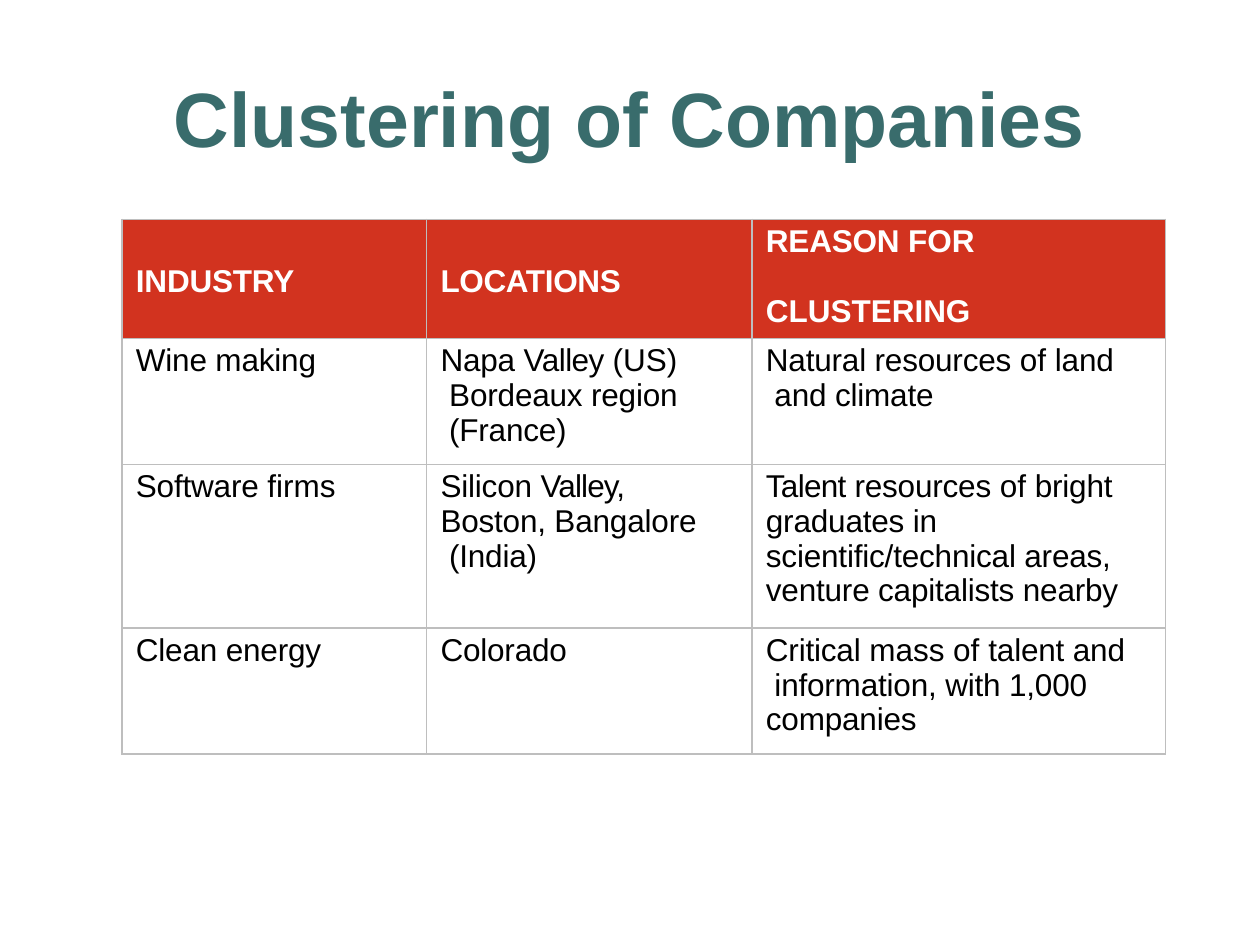
"""Build a slide with a table of industry clusters and the reasons for them."""
import pptx
import pptx.dml.color
import pptx.enum.text
import pptx.oxml
import pptx.oxml.ns
import pptx.util
from pptx.dml.color import RGBColor
from pptx.util import Cm, Pt

TEAL = RGBColor(0x39, 0x6C, 0x6C)
RED = RGBColor(0xD2, 0x33, 0x1F)
WHITE = RGBColor(0xFF, 0xFF, 0xFF)
BLACK = RGBColor(0, 0, 0)
GREY = RGBColor(0xBE, 0xBE, 0xBE)
FONT = "Arial"

TITLE = "Clustering of Companies"
HEADINGS = [
    [[("INDUSTRY", -0.1)]],
    [[("LOCATIONS", -0.2)]],
    [[("REASON ", -0.1), ("FOR", 0)], [("CLUSTERING", 0)]],
]
CLUSTERS = [
    [
        [[("Wine making", -0.1)]],
        [[("Napa ", -0.1), ("Valley ", -0.3), ("(US)\v ", 0),
          ("Bordeaux region\v (France)", -0.1)]],
        [[("Natural resources ", -0.1), ("of ", 0), ("land\v and climate", -0.1)]],
    ],
    [
        [[("Software ", -0.1), ("firms", 0)]],
        [[("Silicon ", -0.1), ("Valley, \v", -0.5), ("Boston, Bangalore\v (India)", -0.1)]],
        [[("Talent ", -0.4), ("resources ", -0.1), ("of ", 0),
          ("bright \vgraduates in \vscientific/technical areas, \vventure capitalists nearby", -0.1)]],
    ],
    [
        [[("Clean energy", -0.1)]],
        [[("Colorado", -0.1)]],
        [[("Critical ", -0.1), ("mass of ", 0),
          ("talent and\v information, with 1,000 \vcompanies", -0.1)]],
    ],
]
COLUMN_WIDTHS = [Cm(6.14), Cm(6.56), Cm(8.33)]
ROW_HEIGHTS = [Cm(2.4), Cm(2.54), Cm(3.3), Cm(2.54)]


def add_text(paragraph, text, size, color, bold, spacing=0):
    """Add one run, turning vertical tabs into line breaks."""
    for index, line in enumerate(text.split("\v")):
        if index:
            paragraph.add_line_break()
        if line:
            run = paragraph.add_run()
            run.text = line
            run.font.name = FONT
            run.font.size = Pt(size)
            run.font.bold = bold
            run.font.color.rgb = color
            if spacing:
                run.font._element.set("spc", str(round(spacing * 100)))


def add_borders(cell):
    """Draw a thin grey line on every side of a cell."""
    properties = cell._tc.get_or_add_tcPr()
    for index, side in enumerate(("lnL", "lnR", "lnT", "lnB")):
        properties.insert(index, pptx.oxml.parse_xml(
            f'<a:{side} {pptx.oxml.ns.nsdecls("a")} w="{Pt(1)}">'
            f'<a:solidFill><a:srgbClr val="{GREY}"/></a:solidFill></a:{side}>'))


def fill_cell(cell, paragraphs, heading):
    """Write and style one table cell."""
    cell.margin_left, cell.margin_top = Cm(0.28), Cm(0.12)
    cell.margin_right = cell.margin_bottom = 0
    anchors = pptx.enum.text.MSO_ANCHOR
    cell.vertical_anchor = anchors.MIDDLE if heading and len(paragraphs) == 1 else anchors.TOP
    if heading:
        cell.fill.solid()
        cell.fill.fore_color.rgb = RED
    else:
        cell.fill.background()
    for index, runs in enumerate(paragraphs):
        frame = cell.text_frame
        paragraph = frame.add_paragraph() if index else frame.paragraphs[0]
        paragraph.line_spacing = 0.98
        if index:
            paragraph.space_before = Pt(20.2)
        for text, spacing in runs:
            add_text(paragraph, text, 18, WHITE if heading else BLACK, heading, spacing)
    add_borders(cell)


def main():
    """Lay out the slide and save it."""
    deck = pptx.Presentation()
    deck.slide_width, deck.slide_height = Cm(25.4), Cm(19.05)
    slide = deck.slides.add_slide(deck.slide_layouts[6])

    title = slide.shapes.add_textbox(Cm(3.48), Cm(1.35), Cm(18.44), Cm(1.93)).text_frame
    title.margin_left = title.margin_right = title.margin_top = title.margin_bottom = 0
    title.vertical_anchor = pptx.enum.text.MSO_ANCHOR.BOTTOM
    title.word_wrap = True
    title.paragraphs[0].alignment = pptx.enum.text.PP_ALIGN.CENTER
    add_text(title.paragraphs[0], TITLE, 44, TEAL, True)

    rows = [HEADINGS] + CLUSTERS
    clusters = slide.shapes.add_table(
        len(rows), len(COLUMN_WIDTHS), Cm(2.46), Cm(4.42),
        sum(COLUMN_WIDTHS), sum(ROW_HEIGHTS)).table
    clusters.horz_banding = False
    for column, width in zip(clusters.columns, COLUMN_WIDTHS):
        column.width = width
    for r, (row, height) in enumerate(zip(rows, ROW_HEIGHTS)):
        clusters.rows[r].height = height
        for c, paragraphs in enumerate(row):
            fill_cell(clusters.cell(r, c), paragraphs, r == 0)

    deck.save("out.pptx")


if __name__ == "__main__":
    main()
